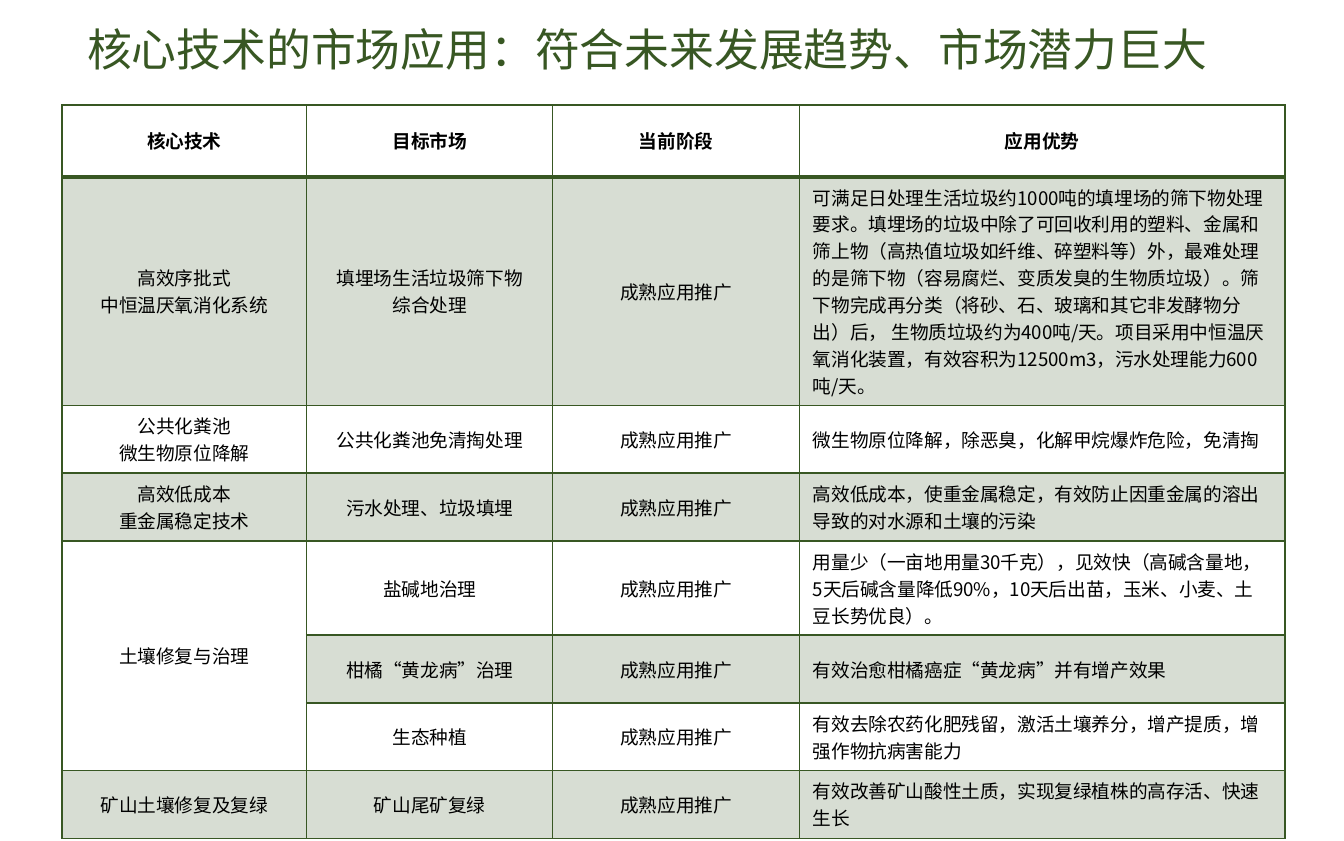
from dataclasses import dataclass

from lxml.etree import SubElement
from pptx import Presentation
from pptx.dml.color import RGBColor
from pptx.enum.text import MSO_ANCHOR, MSO_AUTO_SIZE, PP_ALIGN
from pptx.oxml.ns import qn
from pptx.util import Pt


@dataclass(frozen=True)
class Theme:
    """Colours, font and type sizes of the slide."""
    green: str = "385723"
    black: str = "000000"
    font: str = "Noto Sans CJK SC"
    title_size: float = 24
    table_size: float = 10
    line: float = 1
    header_line: float = 2
    band_alpha: int = 20


THEME = Theme()
STAGE = "成熟应用推广"
HEADLINE = "核心技术的市场应用：符合未来发展趋势、市场潜力巨大"
HEADINGS = ("核心技术", "目标市场", "当前阶段", "应用优势")
APPLICATIONS = (
    ("高效序批式\n中恒温厌氧消化系统", "填埋场生活垃圾筛下物\n综合处理",
     "可满足日处理生活垃圾约1000吨的填埋场的筛下物处理要求。填埋场的垃圾中除了可回收利用的塑料、"
     "金属和筛上物（高热值垃圾如纤维、碎塑料等）外，最难处理的是筛下物（容易腐烂、变质发臭的生物质垃圾）。"
     "筛下物完成再分类（将砂、石、玻璃和其它非发酵物分出）后， 生物质垃圾约为400吨/天。"
     "项目采用中恒温厌氧消化装置，有效容积为12500m3，污水处理能力600吨/天。"),
    ("公共化粪池\n微生物原位降解", "公共化粪池免清掏处理",
     "微生物原位降解，除恶臭，化解甲烷爆炸危险，免清掏"),
    ("高效低成本\n重金属稳定技术", "污水处理、垃圾填埋",
     "高效低成本，使重金属稳定，有效防止因重金属的溶出导致的对水源和土壤的污染"),
    ("土壤修复与治理", "盐碱地治理",
     "用量少（一亩地用量30千克），见效快（高碱含量地，5天后碱含量降低90%，10天后出苗，"
     "玉米、小麦、土豆长势优良）。"),
    ("", "柑橘“黄龙病”治理", "有效治愈柑橘癌症“黄龙病”并有增产效果"),
    ("", "生态种植", "有效去除农药化肥残留，激活土壤养分，增产提质，增强作物抗病害能力"),
    ("矿山土壤修复及复绿", "矿山尾矿复绿",
     "有效改善矿山酸性土质，实现复绿植株的高存活、快速生长"),
)
SOIL_ROWS = (4, 6)
COLUMN_WIDTHS = (131.2, 131.8, 132.2, 260)
ROW_HEIGHTS = (38.6, 122, 36.4, 36.4, 50.4, 36.4, 36, 36.4)


def add_run(paragraph, wording, size, colour, bold=False):
    """Add one run set in the theme font for Latin and East Asian text."""
    run = paragraph.add_run()
    run.text = wording
    run.font.size = Pt(size)
    run.font.bold = bold
    run.font.color.rgb = RGBColor.from_string(colour)
    run.font.name = THEME.font
    SubElement(run.font._element, qn("a:ea"), typeface=THEME.font)


def set_borders(cell, top, bottom):
    """Draw the four cell edges with the given top and bottom weights."""
    properties = cell._tc.get_or_add_tcPr()
    weights = {"lnL": THEME.line, "lnR": THEME.line, "lnT": top, "lnB": bottom}
    for edge, weight in weights.items():
        line = SubElement(properties, qn(f"a:{edge}"), w=str(Pt(weight)))
        SubElement(SubElement(line, qn("a:solidFill")), qn("a:srgbClr"), val=THEME.green)


def set_band(cell, shaded):
    """Fill a cell with translucent green or leave it clear."""
    if not shaded:
        cell.fill.background()
        return
    cell.fill.solid()
    cell.fill.fore_color.rgb = RGBColor.from_string(THEME.green)
    colour = cell._tc.tcPr.find(qn("a:solidFill")).find(qn("a:srgbClr"))
    SubElement(colour, qn("a:alpha"), val=str(THEME.band_alpha * 1000))


def fill_cell(cell, wording, align, bold):
    """Write the lines of a cell as separate paragraphs."""
    cell.vertical_anchor = MSO_ANCHOR.MIDDLE
    for index, line in enumerate(wording.split("\n")):
        frame = cell.text_frame
        paragraph = frame.add_paragraph() if index else frame.paragraphs[0]
        paragraph.alignment = align
        add_run(paragraph, line, THEME.table_size, THEME.black, bold)


def place_title(slide, left, top, width, height):
    """Place the headline in the title placeholder."""
    title = slide.shapes.title
    title.left, title.top, title.width, title.height = map(Pt, (left, top, width, height))
    frame = title.text_frame
    frame.auto_size = MSO_AUTO_SIZE.NONE
    frame.word_wrap = True
    frame.vertical_anchor = MSO_ANCHOR.MIDDLE
    frame.margin_left = frame.margin_right = Pt(5.67)
    frame.margin_top = frame.margin_bottom = Pt(2.83)
    paragraph = frame.paragraphs[0]
    paragraph.alignment = PP_ALIGN.LEFT
    paragraph.line_spacing = 0.9
    add_run(paragraph, HEADLINE, THEME.title_size, THEME.green)


def place_applications(slide, left, top):
    """Place the table of technologies, markets, stages and advantages."""
    body = [(technology, market, STAGE, advantage)
            for technology, market, advantage in APPLICATIONS]
    rows = [HEADINGS, *body]
    box = map(Pt, (left, top, sum(COLUMN_WIDTHS), sum(ROW_HEIGHTS)))
    table = slide.shapes.add_table(len(rows), len(HEADINGS), *box).table
    table.first_row = table.horz_banding = False
    for column, width in zip(table.columns, COLUMN_WIDTHS):
        column.width = Pt(width)
    for row, height in zip(table.rows, ROW_HEIGHTS):
        row.height = Pt(height)
    first_soil, last_soil = SOIL_ROWS
    table.cell(first_soil, 0).merge(table.cell(last_soil, 0))
    for row, wordings in enumerate(rows):
        for column, wording in enumerate(wordings):
            cell = table.cell(row, column)
            set_borders(cell,
                        top=THEME.header_line if row == 1 else THEME.line,
                        bottom=THEME.header_line if row == 0 else THEME.line)
            set_band(cell, row % 2 == 1 and not cell.is_spanned)
            if wording:
                is_advantage = row > 0 and column == len(HEADINGS) - 1
                align = PP_ALIGN.LEFT if is_advantage else PP_ALIGN.CENTER
                fill_cell(cell, wording, align, bold=row == 0)


def main():
    """Build and save the slide."""
    deck = Presentation()
    deck.slide_width, deck.slide_height = Pt(720), Pt(450.72)
    slide = deck.slides.add_slide(deck.slide_layouts[5])
    place_title(slide, 41, 3.6, 656, 48.2)
    place_applications(slide, 33.1, 56.2)
    deck.save("out.pptx")


if __name__ == "__main__":
    main()
